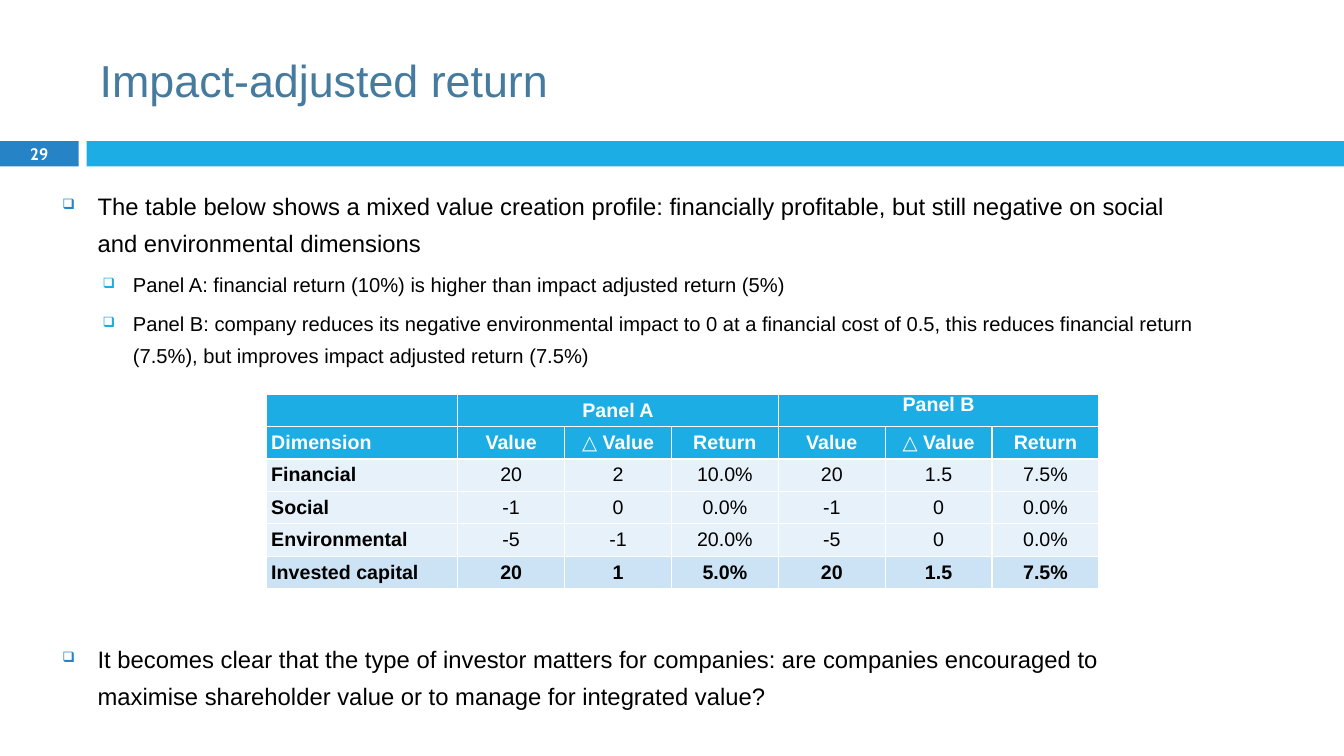
from dataclasses import dataclass

from lxml import etree
from pptx import Presentation
from pptx.dml.color import RGBColor
from pptx.enum import shapes, text
from pptx.oxml import ns
from pptx.util import Inches, Pt

WHITE = RGBColor(0xFF, 0xFF, 0xFF)
BLACK = RGBColor(0, 0, 0)
SLATE = RGBColor(0x45, 0x7B, 0x9E)
BLUE = RGBColor(0x26, 0x83, 0xC6)
SKY = RGBColor(0x1C, 0xAD, 0xE4)
PALE = RGBColor(0xE7, 0xF1, 0xFA)
LIGHT = RGBColor(0xCC, 0xE3, 0xF5)
CENTER = text.PP_ALIGN.CENTER
MIDDLE = text.MSO_ANCHOR.MIDDLE


@dataclass
class Box:
    left: float
    top: float
    width: float
    height: float

    def lengths(self) -> list:
        return [Inches(v) for v in (self.left, self.top, self.width, self.height)]


@dataclass
class Level:
    size: float
    margin: float
    indent: float
    bullet_color: RGBColor
    bullet_percent: int
    space_before: float


@dataclass
class Point:
    words: str
    level: Level
    space_before: float | None = None


@dataclass
class Row:
    cells: list[str]
    fill: RGBColor
    color: RGBColor = BLACK
    bold: bool = False


MAIN = Level(17, 0.35, -0.35, BLUE, 60, 7)
SUB = Level(14.4, 0.7, -0.3, SKY, 70, 5.5)
TABLE_GAP = 192

POINTS = [
    Point("The table below shows a mixed value creation profile: financially profitable, "
          "but still negative on social and environmental dimensions", MAIN),
    Point("Panel A: financial return (10%) is higher than impact adjusted return (5%)", SUB),
    Point("Panel B: company reduces its negative environmental impact to 0 at a financial "
          "cost of 0.5, this reduces financial return (7.5%), but improves impact adjusted "
          "return (7.5%)", SUB),
    Point("It becomes clear that the type of investor matters for companies: are companies "
          "encouraged to maximise shareholder value or to manage for integrated value?",
          MAIN, TABLE_GAP),
]

ROWS = [
    Row(["", "Panel A", "", "", "Panel B", "", ""], SKY, WHITE, True),
    Row(["Dimension"] + ["Value", "△ Value", "Return"] * 2, SKY, WHITE, True),
    Row(["Financial", "20", "2", "10.0%", "20", "1.5", "7.5%"], PALE),
    Row(["Social", "-1", "0", "0.0%", "-1", "0", "0.0%"], PALE),
    Row(["Environmental", "-5", "-1", "20.0%", "-5", "0", "0.0%"], PALE),
    Row(["Invested capital", "20", "1", "5.0%", "20", "1.5", "7.5%"], LIGHT, bold=True),
]
COLUMN_WIDTHS = [1.9] + [1.06] * 6


def apply(target, values: dict) -> None:
    for name, value in values.items():
        setattr(target, name, value)


def add_span(para, words: str, size: float, color: RGBColor,
             font: str = "Arial", bold: bool = False) -> None:
    span = para.add_run()
    span.text = words
    apply(span.font, {"size": Pt(size), "name": font, "bold": bold})
    span.font.color.rgb = color


def add_bar(page, box: Box, color: RGBColor) -> None:
    bar = page.shapes.add_shape(shapes.MSO_SHAPE.RECTANGLE, *box.lengths())
    bar.shadow.inherit = False
    bar.fill.solid()
    bar.fill.fore_color.rgb = color
    bar.line.fill.background()


def add_frame(page, box: Box, anchor=text.MSO_ANCHOR.TOP):
    frame = page.shapes.add_textbox(*box.lengths()).text_frame
    apply(frame, {"word_wrap": True, "vertical_anchor": anchor})
    return frame


def set_bullet(para, level: Level) -> None:
    properties = para._p.get_or_add_pPr()
    properties.set("marL", str(Inches(level.margin)))
    properties.set("indent", str(Inches(level.indent)))
    color = etree.SubElement(properties, ns.qn("a:buClr"))
    etree.SubElement(color, ns.qn("a:srgbClr"), val=str(level.bullet_color))
    etree.SubElement(properties, ns.qn("a:buSzPct"), val=str(level.bullet_percent * 1000))
    etree.SubElement(properties, ns.qn("a:buChar"), char="❑")


def add_points(page, box: Box, points: list[Point]) -> None:
    frame = add_frame(page, box)
    for index, point in enumerate(points):
        para = frame.add_paragraph() if index else frame.paragraphs[0]
        level = point.level
        apply(para, {"level": int(level is SUB), "line_spacing": 1.3,
                     "space_before": Pt(point.space_before or level.space_before)})
        set_bullet(para, level)
        add_span(para, point.words, level.size, BLACK)


def add_returns_table(page, box: Box, rows: list[Row]) -> None:
    table = page.shapes.add_table(len(rows), len(COLUMN_WIDTHS), *box.lengths()).table
    for column, width in zip(table.columns, COLUMN_WIDTHS):
        column.width = Inches(width)
    for row_index, row in enumerate(rows):
        for column_index, words in enumerate(row.cells):
            cell = table.cell(row_index, column_index)
            apply(cell, {"margin_left": Inches(0.05), "margin_right": Inches(0.05),
                         "margin_top": 0, "margin_bottom": 0, "vertical_anchor": MIDDLE})
            cell.fill.solid()
            cell.fill.fore_color.rgb = row.fill
            para = cell.text_frame.paragraphs[0]
            apply(para, {"space_before": Pt(2), "space_after": Pt(2)})
            if column_index:
                para.alignment = CENTER
            if words:
                add_span(para, words, 14, row.color, bold=row.bold or column_index == 0)
    for first in (1, 4):
        table.cell(0, first).merge(table.cell(0, first + 2))
    table.cell(0, 4).vertical_anchor = text.MSO_ANCHOR.TOP


def main() -> None:
    deck = Presentation()
    apply(deck, {"slide_width": Inches(13.33), "slide_height": Inches(7.5)})
    page = deck.slides.add_slide(deck.slide_layouts[6])

    add_bar(page, Box(0, 1.4, 0.78, 0.25), BLUE)
    add_bar(page, Box(0.86, 1.4, 12.47, 0.25), SKY)

    title = add_frame(page, Box(0.89, 0.25, 11.89, 1.08), MIDDLE)
    add_span(title.paragraphs[0], "Impact-adjusted return", 32, SLATE)

    number = add_frame(page, Box(0, 1.39, 0.78, 0.27), MIDDLE)
    number.paragraphs[0].alignment = CENTER
    add_span(number.paragraphs[0], "29", 11.9, WHITE, "Cabin", True)

    add_points(page, Box(0.52, 1.77, 11.44, 5.48), POINTS)
    add_returns_table(page, Box(2.64, 3.91, 8.28, 1.93), ROWS)
    deck.save("out.pptx")


if __name__ == "__main__":
    main()
